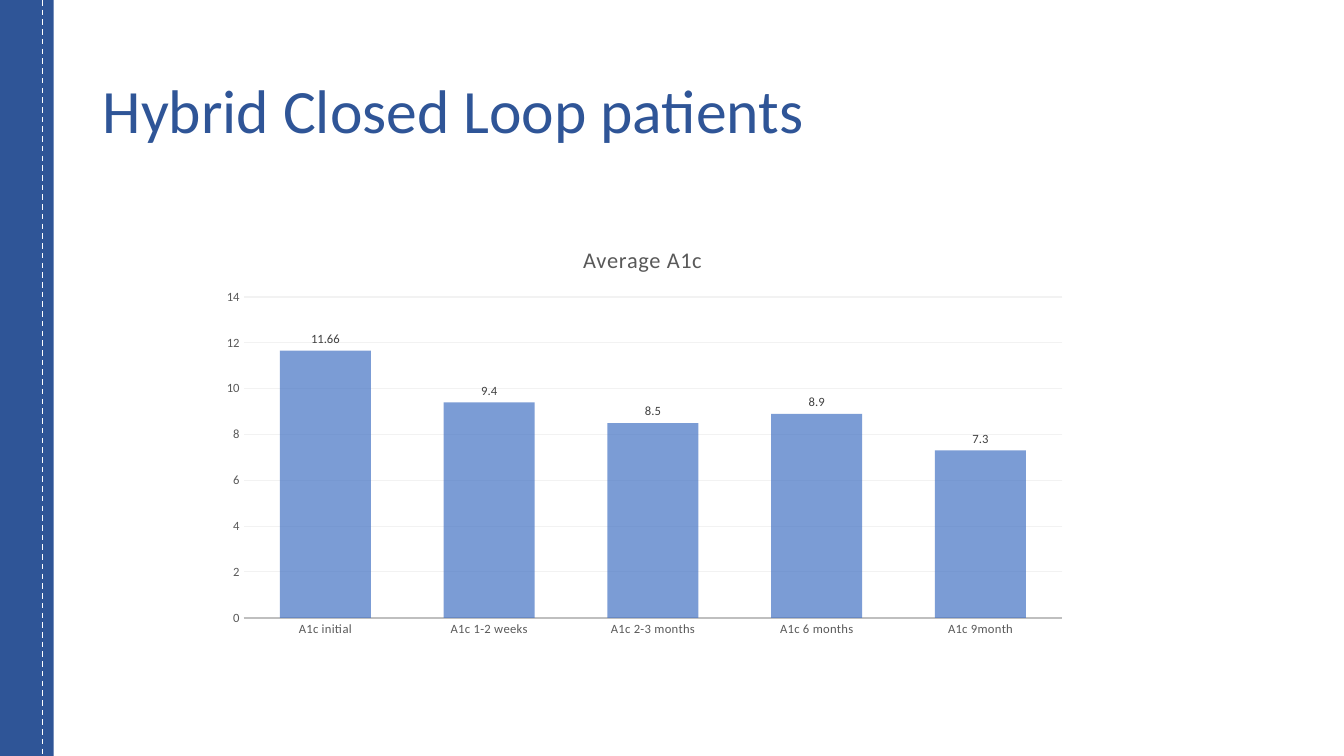
from lxml import etree
from pptx import Presentation
from pptx.chart.data import CategoryChartData
from pptx.dml.color import RGBColor
from pptx.enum.chart import XL_CHART_TYPE, XL_LABEL_POSITION, XL_TICK_MARK
from pptx.enum.dml import MSO_LINE
from pptx.enum.shapes import MSO_CONNECTOR, MSO_SHAPE
from pptx.enum.text import MSO_ANCHOR
from pptx.oxml import parse_xml
from pptx.oxml.ns import nsdecls, qn
from pptx.util import Inches, Pt

FONT = "Calibri"
NAVY = RGBColor(0x2F, 0x55, 0x97)
BLUE = RGBColor(0x44, 0x72, 0xC4)
WHITE = RGBColor(0xFF, 0xFF, 0xFF)
BLACK = RGBColor(0x00, 0x00, 0x00)
DARK_GRAY = RGBColor(0x40, 0x40, 0x40)
GRAY = RGBColor(0x59, 0x59, 0x59)
AXIS_GRAY = RGBColor(0xBF, 0xBF, 0xBF)
GRID_GRAY = RGBColor(0xF2, 0xF2, 0xF2)

A1C_AVERAGES = {
    "A1c initial": 11.66,
    "A1c 1-2 weeks": 9.4,
    "A1c 2-3 months": 8.5,
    "A1c 6 months": 8.9,
    "A1c 9month": 7.3,
}


def set_font(font, size, color):
    font.name = FONT
    font.size = Pt(size)
    font.bold = False
    font.color.rgb = color


def set_layout(parent, position, inner=False, **shares):
    """Place a chart part by shares of the chart."""
    for old_layout in parent.findall(qn("c:layout")):
        parent.remove(old_layout)
    target = '<c:layoutTarget val="inner"/>' if inner else ""
    values = "".join(f'<c:{name} val="{share}"/>' for name, share in shares.items())
    layout = parse_xml(
        f'<c:layout {nsdecls("c")}><c:manualLayout>{target}'
        f'<c:xMode val="edge"/><c:yMode val="edge"/>{values}'
        "</c:manualLayout></c:layout>"
    )
    parent.insert(position, layout)


def add_side_band(slide, left, top, width, height):
    band = slide.shapes.add_shape(MSO_SHAPE.RECTANGLE, left, top, width, height)
    band.shadow.inherit = False
    band.fill.solid()
    band.fill.fore_color.rgb = NAVY
    band.line.fill.background()

    # Dashed stitch along the right edge
    stitch_x = left + int(width * 0.79)
    stitch = slide.shapes.add_connector(
        MSO_CONNECTOR.STRAIGHT, stitch_x, top, stitch_x, top + height
    )
    stitch.line.color.rgb = WHITE
    stitch.line.width = Pt(1)
    stitch.line.dash_style = MSO_LINE.DASH
    etree.SubElement(stitch._element.spPr, qn("a:effectLst"))


def add_title(slide, left, top, width, height):
    frame = slide.shapes.add_textbox(left, top, width, height).text_frame
    frame.word_wrap = True
    frame.vertical_anchor = MSO_ANCHOR.MIDDLE
    paragraph = frame.paragraphs[0]
    paragraph.text = "Hybrid Closed Loop patients"
    paragraph.line_spacing = 0.9
    set_font(paragraph.font, 44, NAVY)


def style_axes(chart):
    for axis in (chart.category_axis, chart.value_axis):
        axis.major_tick_mark = axis.minor_tick_mark = XL_TICK_MARK.NONE
        set_font(axis.tick_labels.font, 9, GRAY)
    category_axis = chart.category_axis
    category_axis.format.line.color.rgb = AXIS_GRAY
    category_axis.format.line.width = Pt(1.25)
    category_axis._element.find(".//" + qn("a:defRPr")).set("spc", "20")

    value_axis = chart.value_axis
    value_axis.minimum_scale, value_axis.maximum_scale = 0, 14
    value_axis.major_unit = 2
    value_axis.format.line.fill.background()
    grid_line = value_axis.major_gridlines.format.line
    grid_line.color.rgb = GRID_GRAY
    grid_line.width = Pt(0.75)


def style_columns(chart):
    plot = chart.plots[0]
    plot.vary_by_categories = False
    plot.gap_width = 80
    plot.overlap = 25
    series = plot.series[0]
    fill = series.format.fill
    fill.solid()
    fill.fore_color.rgb = BLUE
    color = series._element.spPr.find(".//" + qn("a:srgbClr"))
    etree.SubElement(color, qn("a:alpha"), val="70000")

    labels = series.data_labels
    labels.show_value = True
    labels.position = XL_LABEL_POSITION.OUTSIDE_END
    set_font(labels.font, 9, DARK_GRAY)


def add_a1c_chart(slide, left, top, width, height):
    data = CategoryChartData()
    data.categories = list(A1C_AVERAGES)
    data.add_series("Series 1", list(A1C_AVERAGES.values()))
    chart = slide.shapes.add_chart(
        XL_CHART_TYPE.COLUMN_CLUSTERED, left, top, width, height, data
    ).chart
    set_font(chart.font, 10, BLACK)
    chart.has_legend = False
    style_axes(chart)
    style_columns(chart)

    # Chart title with slightly open letter spacing
    chart.has_title = True
    title = chart.chart_title
    paragraph = title.text_frame.paragraphs[0]
    paragraph.text = "Average A1c"
    set_font(paragraph.font, 16, GRAY)
    paragraph.runs[0]._r.get_or_add_rPr().set("spc", "50")

    # Title and plot positions
    set_layout(title._element, 1, x=0.425, y=0.033)
    plot_area = chart._chartSpace.chart.plotArea
    set_layout(plot_area, 0, inner=True, x=0.04, y=0.168, w=0.94, h=0.767)


def main():
    presentation = Presentation()
    presentation.slide_width = Inches(13.33)
    presentation.slide_height = Inches(7.5)
    slide = presentation.slides.add_slide(presentation.slide_layouts[6])

    band_width = int(presentation.slide_width * 0.04)
    add_side_band(slide, 0, 0, band_width, presentation.slide_height)
    add_title(slide, Inches(0.92), Inches(0.4), Inches(11.5), Inches(1.45))
    add_a1c_chart(slide, Inches(2.07), Inches(2.25), Inches(8.64), Inches(4.15))
    presentation.save("out.pptx")


if __name__ == "__main__":
    main()
